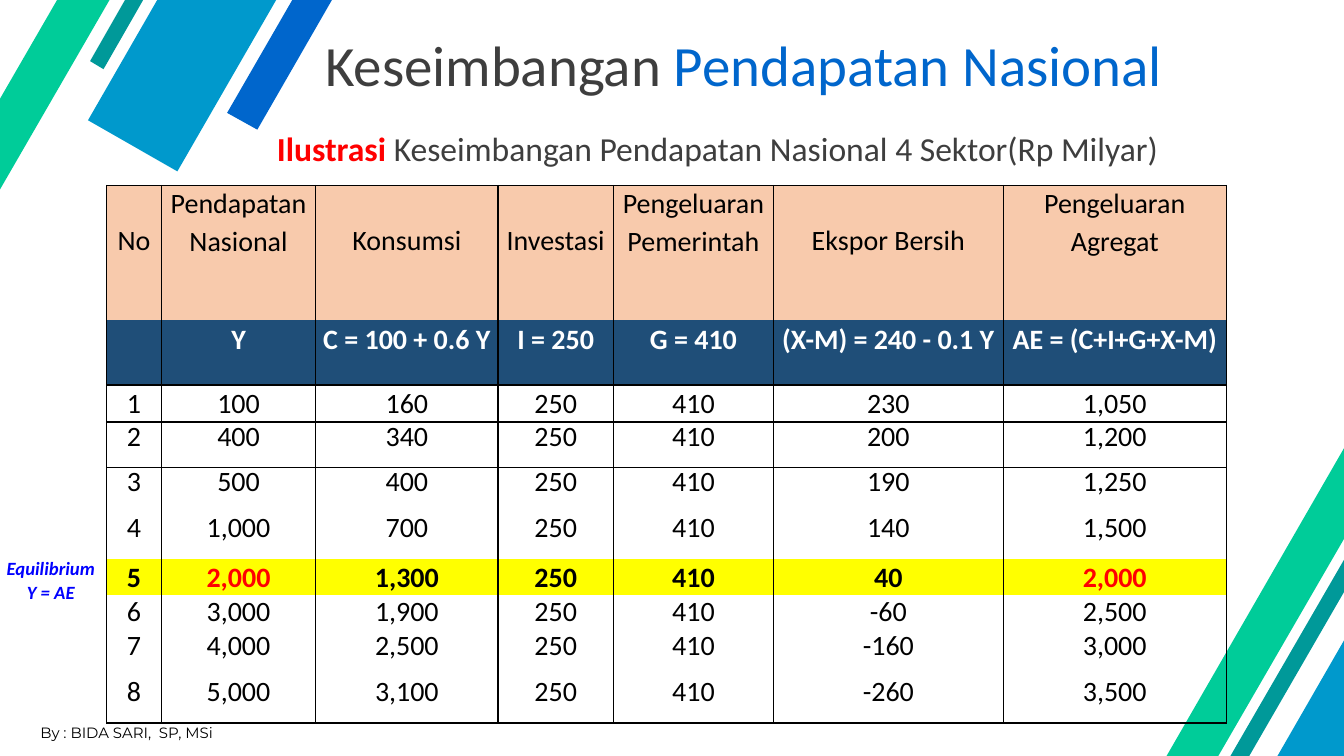
from lxml.etree import SubElement
from pptx import Presentation
from pptx.dml.color import RGBColor
from pptx.enum.text import MSO_ANCHOR, PP_ALIGN
from pptx.oxml import parse_xml
from pptx.oxml.ns import nsdecls, qn
from pptx.util import Inches, Pt


def color(hex_string):
    return RGBColor.from_string(hex_string)


def add_run(paragraph, text, size, hex_color, bold=False, italic=False, font="Calibri"):
    run = paragraph.add_run()
    run.text = text
    run.font.size = Pt(size)
    run.font.name = font
    run.font.bold = bold
    run.font.italic = italic
    run.font.color.rgb = color(hex_color)


presentation = Presentation()
presentation.slide_width = Inches(20)
presentation.slide_height = Inches(11.25)
slide = presentation.slides.add_slide(presentation.slide_layouts[6])

# Diagonal stripes, top left then bottom right
stripes = [
    ("0066CC", [(4.94, 0), (4.35, 0), (3.38, 1.68), (3.83, 1.93)]),
    ("0099CC", [(4.11, 0), (2.34, 0), (1.31, 1.79), (2.64, 2.55)]),
    ("009999", [(2.13, 0), (1.86, 0), (1.34, 0.91), (1.54, 1.03)]),
    ("00CC99", [(1.63, 0), (0.85, 0), (0, 1.47), (0, 2.82)]),
    ("0099CC", [(20, 9.53), (19.01, 11.25), (20, 11.25)]),
    ("009999", [(20, 8.33), (18.31, 11.25), (18.59, 11.25), (20, 8.81)]),
    ("00CC99", [(20, 6.67), (17.36, 11.25), (18.13, 11.25), (20, 8.02)]),
]
for fill, corners in stripes:
    points = [(Inches(x), Inches(y)) for x, y in corners]
    builder = slide.shapes.build_freeform(*points[0])
    builder.add_line_segments(points[1:], close=True)
    shape = builder.convert_to_shape()
    shape.shadow.inherit = False
    shape.fill.solid()
    shape.fill.fore_color.rgb = color(fill)
    shape.line.fill.background()

# Table contents
header = ["No", "Pendapatan\nNasional", "Konsumsi", "Investasi",
          "Pengeluaran\nPemerintah", "Ekspor Bersih", "Pengeluaran\nAgregat"]
formulas = ["", "Y", "C = 100 + 0.6 Y", "I = 250", "G = 410",
            "(X-M) = 240 - 0.1 Y", "AE = (C+I+G+X-M)"]
incomes = [100, 400, 500, 1000, 2000, 3000, 4000, 5000]
rows = [header, formulas]
for number, income in enumerate(incomes, start=1):
    consumption = 100 + income * 6 // 10
    net_export = 240 - income // 10
    aggregate = consumption + 250 + 410 + net_export
    values = [number, income, consumption, 250, 410, net_export, aggregate]
    rows.append([f"{value:,}" for value in values])

column_widths = [0.81, 2.3, 2.71, 1.72, 2.38, 3.42, 3.32]
row_heights = [2, 0.97, 0.55, 0.68, 0.68, 0.68, 0.52, 0.54, 0.68, 0.68]
row_fills = {0: "F8CAAC", 1: "1F4E78", 6: "FFFF00"}
top_margins = {0: 0.02, 1: 0.04, 2: 0.02, 6: 0.03}
exact_spacing_rows = {3, 4, 5, 8, 9}
top_line_rows = {0, 2, 3}
bottom_line_rows = {1, 2, 9}

frame = slide.shapes.add_table(len(rows), len(header), Inches(1.59), Inches(2.76),
                               Inches(sum(column_widths)), Inches(sum(row_heights)))
table = frame.table
table.first_row = False
table.horz_banding = False
# Style without lines or fills
style_id = frame._element.find(".//" + qn("a:tableStyleId"))
style_id.text = "{2D5ABB26-0587-4C30-8999-92F81FD0307C}"
for column, width in zip(table.columns, column_widths):
    column.width = Inches(width)

# Table cells
for row_index, row in enumerate(rows):
    table.rows[row_index].height = Inches(row_heights[row_index])
    for column_index, text in enumerate(row):
        cell = table.cell(row_index, column_index)
        cell.margin_left = cell.margin_right = cell.margin_bottom = 0
        cell.margin_top = Inches(top_margins.get(row_index, 0))
        cell.vertical_anchor = MSO_ANCHOR.TOP
        lines = text.split("\n")
        if row_index == 0 and len(lines) == 1:
            cell.margin_top = Inches(0.57)

        text_color = "FFFFFF" if row_index == 1 else "000000"
        if row_index == 6 and column_index in (1, 6):
            text_color = "FF0000"
        for line_index, line in enumerate(lines):
            if line_index:
                paragraph = cell.text_frame.add_paragraph()
                paragraph.space_before = Pt(3.9)
            else:
                paragraph = cell.text_frame.paragraphs[0]
            paragraph.alignment = PP_ALIGN.CENTER
            if row_index in exact_spacing_rows:
                paragraph.line_spacing = Pt(34)
            if line:
                add_run(paragraph, line, 30, text_color, bold=row_index in (1, 6))

        if row_index in row_fills:
            cell.fill.solid()
            cell.fill.fore_color.rgb = color(row_fills[row_index])
        else:
            cell.fill.background()

        # Borders come before the fill in the cell properties
        sides = ["lnL", "lnR"]
        if row_index in top_line_rows:
            sides.append("lnT")
        if row_index in bottom_line_rows:
            sides.append("lnB")
        properties = cell._tc.get_or_add_tcPr()
        for position, side in enumerate(sides):
            border = parse_xml(
                f'<a:{side} {nsdecls("a")} w="{Pt(1.5)}"><a:solidFill>'
                f'<a:srgbClr val="000000"/></a:solidFill></a:{side}>')
            properties.insert(position, border)

# Text boxes: place, insets, alignment, paragraphs of runs
left, center = PP_ALIGN.LEFT, PP_ALIGN.CENTER
dark, blue = "3E3E3E", "0066CC"
text_boxes = [
    ((4.11, 1.88, 13.81, 0.62), (0.01, 0.02), left, [
        [("Ilustrasi ", 36, "FF0000", True),
         ("Keseimbangan Pendapatan Nasional 4 Sektor(Rp Milyar)", 36, dark)]]),
    ((0.08, 8.27, 1.35, 0.7), (0, 0.02), center, [
        [("Equilibrium", 20, "0000FF", True, True)],
        [("Y = AE", 20, "0000FF", True, True)]]),
    ((2.6, 0.42, 15.73, 1.04), (2.24, 0.02), left, [
        [("Keseimbangan ", 61, dark), ("Pendapatan Nasional", 61, blue)]]),
    ((0.42, 10.68, 3.29, 0.45), (0.18, 0.09), left, [
        [("By : BIDA SARI,  SP, MSi", 16, "000000", False, False, "Montserrat")]]),
]
for place, (inset_left, inset_top), alignment, paragraphs in text_boxes:
    box = slide.shapes.add_textbox(*[Inches(length) for length in place])
    text_frame = box.text_frame
    text_frame.word_wrap = True
    text_frame.margin_left = Inches(inset_left)
    text_frame.margin_top = Inches(inset_top)
    text_frame.margin_right = text_frame.margin_bottom = 0
    for index, runs in enumerate(paragraphs):
        paragraph = text_frame.add_paragraph() if index else text_frame.paragraphs[0]
        paragraph.alignment = alignment
        if index:
            paragraph.space_before = Pt(1)
        for run in runs:
            add_run(paragraph, *run)

presentation.save("out.pptx")
